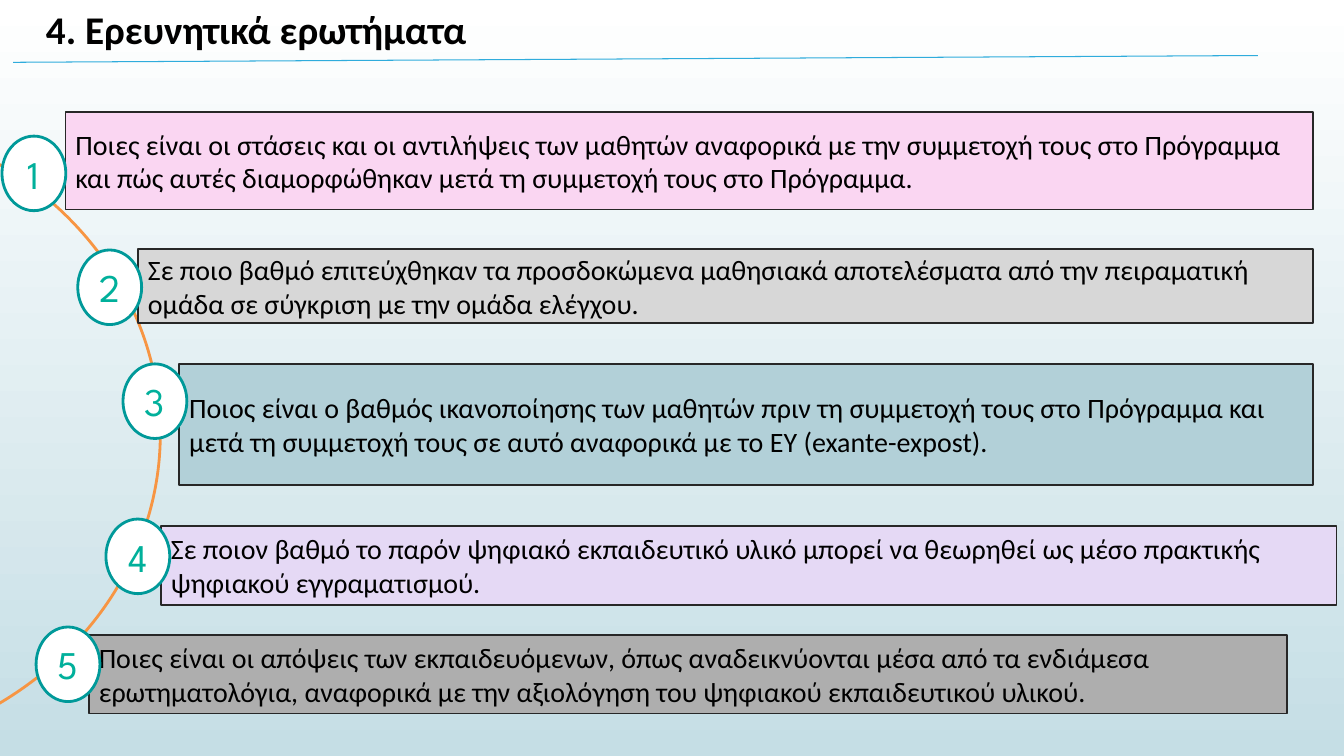
from dataclasses import dataclass

from lxml import etree
from pptx import Presentation
from pptx.dml.color import RGBColor
from pptx.enum.shapes import MSO_CONNECTOR, MSO_SHAPE
from pptx.enum.text import MSO_ANCHOR, PP_ALIGN
from pptx.oxml.ns import qn
from pptx.shapes.autoshape import Shape
from pptx.slide import Slide
from pptx.util import Cm, Pt

ARC, OVAL, RECT = MSO_SHAPE.ARC, MSO_SHAPE.OVAL, MSO_SHAPE.RECTANGLE
STRAIGHT = MSO_CONNECTOR.STRAIGHT
MIDDLE = MSO_ANCHOR.MIDDLE
LEFT, CENTER = PP_ALIGN.LEFT, PP_ALIGN.CENTER

Box = tuple[float, float, float, float]


@dataclass(frozen=True)
class Theme:
    sky: str = "FFFFFF"
    haze: str = "C5DEE5"
    ink: str = "000000"
    edge: str = "272727"
    curve: str = "F79543"
    ring: str = "009999"
    digit: str = "00B09B"
    disc: str = "FFFFFF"
    rule: str = "2FACDC"
    font: str = "Calibri"
    digit_font: str = "League Spartan"
    large: int = 28
    body: int = 20


@dataclass(frozen=True)
class Question:
    """A numbered bar; box and spot (top left of its disc) are in cm."""
    text: str
    fill: str
    box: Box
    spot: tuple[float, float]


THEME = Theme()
DISC = (1.61, 1.88)
QUESTIONS = [
    Question("Ποιες είναι οι στάσεις και οι αντιλήψεις των μαθητών αναφορικά με την "
             "συμμετοχή τους στο Πρόγραμμα και πώς αυτές διαμορφώθηκαν μετά τη "
             "συμμετοχή τους στο Πρόγραμμα.",
             "FAD6F2", (1.65, 2.82, 31.45, 2.46), (0.05, 3.43)),
    Question("Σε ποιο βαθμό επιτεύχθηκαν τα προσδοκώμενα μαθησιακά αποτελέσματα από "
             "την πειραματική ομάδα σε σύγκριση με την ομάδα ελέγχου.",
             "D7D7D7", (3.48, 6.27, 29.62, 1.88), (1.96, 6.3)),
    Question("Ποιος είναι ο βαθμός ικανοποίησης των μαθητών πριν τη συμμετοχή τους "
             "στο Πρόγραμμα και μετά τη συμμετοχή τους σε αυτό αναφορικά με το ΕΥ "
             "(exante-expost).",
             "B2D0D8", (4.52, 9.17, 28.58, 3.05), (3.1, 9.17)),
    Question("Σε ποιον βαθμό το παρόν ψηφιακό εκπαιδευτικό υλικό μπορεί να θεωρηθεί "
             "ως μέσο πρακτικής ψηφιακού εγγραματισμού.",
             "E5D9F5", (4.06, 13.26, 29.62, 1.98), (2.67, 13.08)),
    Question("Ποιες είναι οι απόψεις των εκπαιδευόμενων, όπως αναδεικνύονται μέσα "
             "από τα ενδιάμεσα ερωτηματολόγια, αναφορικά με την αξιολόγηση του "
             "ψηφιακού εκπαιδευτικού υλικού.",
             "AEAEAE", (2.24, 16, 30.2, 1.98), (0.91, 15.8)),
]


def rgb(code: str) -> RGBColor:
    return RGBColor.from_string(code)


def write(shape: Shape, text: str, size: int, font: str, color: str,
          align: PP_ALIGN = LEFT, bold: bool = False) -> None:
    frame = shape.text_frame
    frame.text = text
    frame.word_wrap = True
    para = frame.paragraphs[0]
    para.alignment = align
    style = para.runs[0].font
    style.size, style.name, style.bold = Pt(size), font, bold
    style.color.rgb = rgb(color)


def add_form(slide: Slide, kind: MSO_SHAPE, box: Box, fill: str | None,
             line: str, width: float) -> Shape:
    shape = slide.shapes.add_shape(kind, *map(Cm, box))
    shape.shadow.inherit = False
    if fill:
        shape.fill.solid()
        shape.fill.fore_color.rgb = rgb(fill)
    else:
        shape.fill.background()
    shape.line.color.rgb = rgb(line)
    shape.line.width = Pt(width)
    shape.text_frame.vertical_anchor = MIDDLE
    return shape


def add_bar(slide: Slide, item: Question) -> None:
    bar = add_form(slide, RECT, item.box, item.fill, THEME.edge, 1.25)
    write(bar, item.text, THEME.body, THEME.font, THEME.ink)


def add_disc(slide: Slide, item: Question, number: int) -> None:
    disc = add_form(slide, OVAL, item.spot + DISC, THEME.disc, THEME.ring, 2)
    frame = disc.text_frame
    frame.margin_left = frame.margin_right = Cm(0.25)
    frame.margin_top = frame.margin_bottom = Cm(0.25)
    write(disc, str(number), THEME.large, THEME.digit_font, THEME.digit, CENTER)
    frame.word_wrap = False


def add_curve(slide: Slide) -> None:
    curve = add_form(slide, ARC, (-13.89, 2.82, 17.93, 16.23), None, THEME.curve, 2)
    # One unit of adjustment is 100000 steps; one degree is 60000.
    for index, angle in enumerate((300, 60)):
        curve.adjustments[index] = angle * 0.6


def add_title(slide: Slide) -> None:
    title = slide.shapes.add_textbox(Cm(0.91), Cm(0), Cm(28.85), Cm(1.45))
    write(title, "4. Ερευνητικά ερωτήματα", THEME.large, THEME.font, THEME.ink,
          bold=True)
    rule = slide.shapes.add_connector(STRAIGHT, Cm(0.33), Cm(1.57), Cm(31.7), Cm(1.4))
    rule.line.color.rgb = rgb(THEME.rule)
    rule.line.width = Pt(0.75)
    etree.SubElement(rule._element.spPr, qn("a:effectLst"))


def paint(slide: Slide) -> None:
    fill = slide.background.fill
    fill.gradient()
    fill.gradient_angle = 270
    for stop, color in zip(fill.gradient_stops, (THEME.sky, THEME.haze)):
        stop.color.rgb = rgb(color)


def main() -> None:
    deck = Presentation()
    deck.slide_width, deck.slide_height = Cm(33.87), Cm(19.05)
    slide = deck.slides.add_slide(deck.slide_layouts[6])
    paint(slide)
    for number, item in enumerate(QUESTIONS, 1):
        add_bar(slide, item)
        if number == 1:
            add_curve(slide)
        add_disc(slide, item, number)
    add_title(slide)
    deck.save("out.pptx")


if __name__ == "__main__":
    main()
